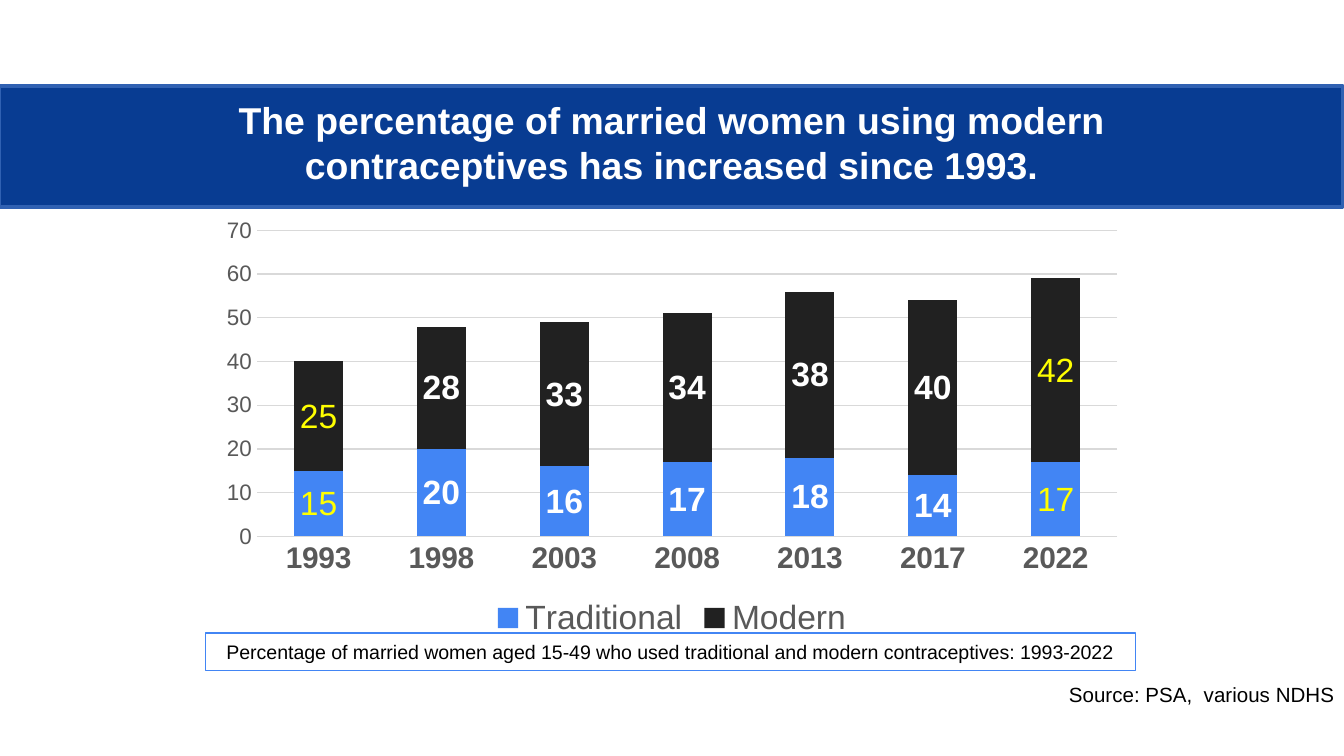
from dataclasses import dataclass

from pptx import Presentation
from pptx.chart.data import CategoryChartData
from pptx.dml.color import RGBColor
from pptx.enum.chart import (XL_CHART_TYPE, XL_LABEL_POSITION,
                             XL_LEGEND_POSITION, XL_TICK_MARK)
from pptx.enum.shapes import MSO_SHAPE
from pptx.enum.text import MSO_ANCHOR, PP_ALIGN
from pptx.util import Inches, Pt

WIDTH = Inches(10)
HEIGHT = WIDTH * 9 // 16
FONT = "Arial"

WHITE = RGBColor(0xFF, 0xFF, 0xFF)
BLACK = RGBColor(0x00, 0x00, 0x00)
NAVY = RGBColor(0x08, 0x3C, 0x92)
NAVY_EDGE = RGBColor(0x30, 0x61, 0xB2)
BLUE = RGBColor(0x42, 0x85, 0xF4)
CHARCOAL = RGBColor(0x21, 0x21, 0x21)
GREY = RGBColor(0x59, 0x59, 0x59)
PALE_GREY = RGBColor(0xD9, 0xD9, 0xD9)
YELLOW = RGBColor(0xFF, 0xFF, 0x00)


@dataclass(frozen=True)
class Area:
    """A rectangle in percent of the slide's width and height."""
    left: float
    top: float
    width: float
    height: float

    def box(self) -> tuple[int, int, int, int]:
        return (round(self.left * WIDTH / 100), round(self.top * HEIGHT / 100),
                round(self.width * WIDTH / 100),
                round(self.height * HEIGHT / 100))


@dataclass(frozen=True)
class Method:
    name: str
    color: RGBColor
    percentages: tuple[int, ...]


YEARS = ("1993", "1998", "2003", "2008", "2013", "2017", "2022")
METHODS = (
    Method("Traditional", BLUE, (15, 20, 16, 17, 18, 14, 17)),
    Method("Modern", CHARCOAL, (25, 28, 33, 34, 38, 40, 42)),
)
HIGHLIGHTED = (0, len(YEARS) - 1)  # first and last survey


def style_font(font, size: float, color: RGBColor, bold: bool = False) -> None:
    font.name, font.size, font.bold = FONT, Pt(size), bold
    font.color.rgb = color


def write(shape, text: str, size: float, color: RGBColor, align: PP_ALIGN,
          bold: bool = False, inset: tuple[float, float] = (0.1, 0.05)) -> None:
    frame = shape.text_frame
    frame.word_wrap = True
    frame.vertical_anchor = MSO_ANCHOR.MIDDLE
    frame.margin_left = frame.margin_right = Inches(inset[0])
    frame.margin_top = frame.margin_bottom = Inches(inset[1])
    paragraph = frame.paragraphs[0]
    paragraph.text = text
    paragraph.alignment = align
    style_font(paragraph.font, size, color, bold)


def add_panel(slide, area: Area, edge: RGBColor, edge_width: float,
              fill: RGBColor | None = None):
    panel = slide.shapes.add_shape(MSO_SHAPE.RECTANGLE, *area.box())
    panel.shadow.inherit = False
    if fill is None:
        panel.fill.background()
    else:
        panel.fill.solid()
        panel.fill.fore_color.rgb = fill
    panel.line.color.rgb = edge
    panel.line.width = Pt(edge_width)
    return panel


def style_line(line) -> None:
    line.color.rgb = PALE_GREY
    line.width = Pt(0.75)


def add_usage_chart(slide, area: Area) -> None:
    usage = CategoryChartData()
    usage.categories = YEARS
    for method in METHODS:
        usage.add_series(method.name, method.percentages)
    chart = slide.shapes.add_chart(
        XL_CHART_TYPE.COLUMN_STACKED, *area.box(), usage).chart
    style_font(chart.font, 10, BLACK)
    chart.has_title = False

    # Axes
    years, percent = chart.category_axis, chart.value_axis
    for axis in (years, percent):
        axis.major_tick_mark = axis.minor_tick_mark = XL_TICK_MARK.NONE
    style_font(years.tick_labels.font, 16, GREY, bold=True)
    style_line(years.format.line)
    style_font(percent.tick_labels.font, 12, GREY)
    percent.minimum_scale, percent.maximum_scale = 0, 70
    percent.major_unit = 10
    percent.format.line.fill.background()
    style_line(percent.major_gridlines.format.line)

    # Legend
    chart.has_legend = True
    chart.legend.position = XL_LEGEND_POSITION.BOTTOM
    chart.legend.include_in_layout = False
    style_font(chart.legend.font, 18, GREY)

    # Columns and their labels
    plot = chart.plots[0]
    plot.gap_width, plot.overlap = 150, 100
    plot.vary_by_categories = False
    for method, series in zip(METHODS, plot.series):
        series.format.fill.solid()
        series.format.fill.fore_color.rgb = method.color
        series.invert_if_negative = False
        labels = series.data_labels
        labels.show_value = True
        labels.position = XL_LABEL_POSITION.CENTER
        style_font(labels.font, 18, WHITE, bold=True)
        for index in HIGHLIGHTED:
            label = series.points[index].data_label
            style_font(label.font, 18, YELLOW)
            label.position = XL_LABEL_POSITION.CENTER


def main() -> None:
    deck = Presentation()
    deck.slide_width, deck.slide_height = WIDTH, HEIGHT
    slide = deck.slides.add_slide(deck.slide_layouts[6])

    # Title band
    add_panel(slide, Area(-0.1, 11.35, 100, 16), NAVY_EDGE, 2, NAVY)
    title = slide.shapes.add_textbox(*Area(10.5, 11.95, 79, 13.7).box())
    write(title, "The percentage of married women using modern "
          "contraceptives has increased since 1993.",
          20, WHITE, PP_ALIGN.CENTER, bold=True)

    # Chart
    add_usage_chart(slide, Area(15.5, 27.75, 69, 57.4))

    # Caption and source
    caption = add_panel(slide, Area(15.3, 83.75, 69.2, 4.95), BLUE, 0.75)
    write(caption, "Percentage of married women aged 15-49 who used "
          "traditional and modern contraceptives: 1993-2022",
          10.5, BLACK, PP_ALIGN.CENTER)
    source = slide.shapes.add_textbox(*Area(72.1, 89.6, 27.9, 4.6).box())
    write(source, "Source: PSA,  various NDHS", 11, BLACK, PP_ALIGN.RIGHT,
          inset=(0.07, 0.04))

    deck.save("out.pptx")


if __name__ == "__main__":
    main()
